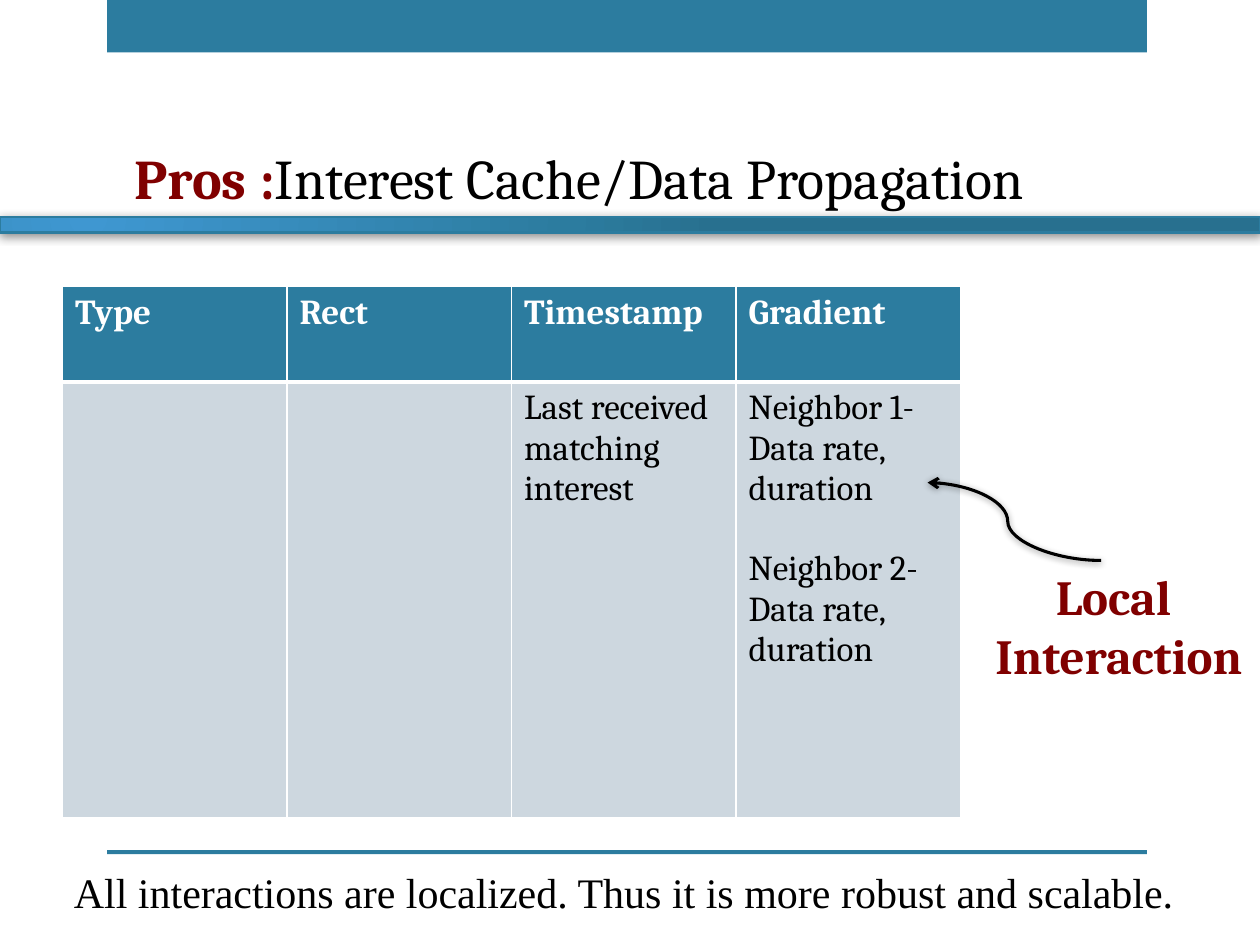
from pptx import Presentation
from pptx.dml.color import RGBColor
from pptx.enum.shapes import MSO_CONNECTOR, MSO_SHAPE
from pptx.enum.text import MSO_ANCHOR, PP_ALIGN
from pptx.oxml import parse_xml
from pptx.oxml.ns import nsdecls
from pptx.util import Cm, Pt

RECT = MSO_SHAPE.RECTANGLE
CURVE = MSO_CONNECTOR.CURVE
BOTTOM, TOP = MSO_ANCHOR.BOTTOM, MSO_ANCHOR.TOP
LEFT, CENTER = PP_ALIGN.LEFT, PP_ALIGN.CENTER

TEAL = RGBColor(0x2C, 0x7C, 0x9F)
PALE = RGBColor(0xCD, 0xD7, 0xDF)
MAROON = RGBColor(0x80, 0x00, 0x00)
BLACK = RGBColor(0x00, 0x00, 0x00)
WHITE = RGBColor(0xFF, 0xFF, 0xFF)
BAR_STOPS = ((0, "3F97D1"), (76, "2C7C9F"), (100, "28708F"))

SERIF = "Cambria"
ROMAN = "Times New Roman"

HEADERS = ["Type", "Rect", "Timestamp", "Gradient"]
ENTRY = [
    [],
    [],
    ["Last received matching interest"],
    ["Neighbor 1-", "Data rate, duration", "Neighbor 2-", "Data rate, duration"],
]


def style(r, size, color, bold=False, font=SERIF):
    r.font.name = font
    r.font.size = Pt(size)
    r.font.bold = bold
    r.font.color.rgb = color


def add_band(s, x, y, w, h):
    sp = s.shapes.add_shape(RECT, Cm(x), Cm(y), Cm(w), Cm(h))
    sp.shadow.inherit = False
    sp.fill.solid()
    sp.fill.fore_color.rgb = TEAL
    sp.line.fill.background()
    return sp


def add_shadow(sp, opacity, blur, dist, angle):
    """Put an outer shadow in the shape's effect list."""
    props = sp._element.spPr
    for old in props.findall("{*}effectLst"):
        props.remove(old)
    props.append(parse_xml(
        f'<a:effectLst {nsdecls("a")}><a:outerShdw blurRad="{Pt(blur)}" '
        f'dist="{Pt(dist)}" dir="{angle * 60000}" rotWithShape="0">'
        f'<a:srgbClr val="000000"><a:alpha val="{opacity * 1000}"/></a:srgbClr>'
        '</a:outerShdw></a:effectLst>'))


def add_gradient_bar(s, x, y, w, h):
    sp = add_band(s, x, y, w, h)
    stops = "".join(
        f'<a:gs pos="{pos * 1000}"><a:srgbClr val="{color}"/></a:gs>'
        for pos, color in BAR_STOPS)
    props = sp._element.spPr
    props.replace(props.find("{*}solidFill"), parse_xml(
        f'<a:gradFill {nsdecls("a")} rotWithShape="1"><a:gsLst>{stops}</a:gsLst>'
        '<a:path path="circle"><a:fillToRect l="15000" t="15000" '
        'r="100000" b="100000"/></a:path></a:gradFill>'))
    sp.line.color.rgb = TEAL
    sp.line.width = Pt(1.25)
    add_shadow(sp, 45, 6, 1, 90)


def add_text(s, box, lines, size, font=SERIF, align=LEFT, anchor=TOP, wrap=False):
    """Each line is a list of (text, color, bold) runs."""
    tf = s.shapes.add_textbox(*map(Cm, box)).text_frame
    tf.word_wrap = wrap
    tf.vertical_anchor = anchor
    for i, runs in enumerate(lines):
        p = tf.paragraphs[0] if i == 0 else tf.add_paragraph()
        p.alignment = align
        for text, color, bold in runs:
            r = p.add_run()
            r.text = text
            style(r, size, color, bold, font)


def set_borders(cell, top, bottom):
    widths = {"lnL": 1, "lnR": 1, "lnT": top, "lnB": bottom}
    for i, (side, width) in enumerate(widths.items()):
        cell._tc.get_or_add_tcPr().insert(i, parse_xml(
            f'<a:{side} {nsdecls("a")} w="{Pt(width)}"><a:solidFill>'
            f'<a:srgbClr val="{WHITE}"/></a:solidFill></a:{side}>'))


def fill_cell(cell, lines, fill, color, bold):
    cell.fill.solid()
    cell.fill.fore_color.rgb = fill
    tf = cell.text_frame
    tf.text = "\n".join(lines)
    for i, p in enumerate(tf.paragraphs):
        if i == 2:  # gap before the second neighbor
            p.space_before = Pt(23)
        for r in p.runs:
            style(r, 20, color, bold)


def add_cache_table(s):
    tbl = s.shapes.add_table(
        2, len(HEADERS), Cm(1.26), Cm(5.77), Cm(18.1), Cm(10.72)).table
    tbl.rows[0].height, tbl.rows[1].height = Cm(1.93), Cm(8.79)
    for i, (header, lines) in enumerate(zip(HEADERS, ENTRY)):
        head, body = tbl.cell(0, i), tbl.cell(1, i)
        fill_cell(head, [header], TEAL, WHITE, True)
        fill_cell(body, lines, PALE, BLACK, False)
        set_borders(head, 1, 3)
        set_borders(body, 3, 1)


def add_curved_arrow(s, x1, y1, x2, y2):
    cn = s.shapes.add_connector(CURVE, Cm(x1), Cm(y1), Cm(x2), Cm(y2))
    cn.line.color.rgb = BLACK
    cn.line.width = Pt(1.75)
    cn.line._get_or_add_ln().append(
        parse_xml(f'<a:tailEnd {nsdecls("a")} type="arrow"/>'))
    geom = cn._element.spPr.find("{*}prstGeom")
    geom.replace(geom.find("{*}avLst"), parse_xml(
        f'<a:avLst {nsdecls("a")}><a:gd name="adj1" fmla="val 53800"/></a:avLst>'))
    add_shadow(cn, 40, 4, 1, 90)


def main():
    prs = Presentation()
    prs.slide_width, prs.slide_height = Cm(25.4), Cm(19.05)
    s = prs.slides.add_slide(prs.slide_layouts[6])

    # Top and bottom bands
    add_band(s, 2.16, 0, 20.96, 1.06)
    add_band(s, 2.16, 17.14, 20.96, 0.08)

    # Title and the bar under it
    add_text(s, (2.46, 1.3, 21.08, 3.07),
             [[("Pros :", MAROON, True),
               ("Interest Cache/Data Propagation", BLACK, False)]],
             32, anchor=BOTTOM, wrap=True)
    add_gradient_bar(s, 0, 4.37, 25.4, 0.32)

    # Interest cache, with the callout on its gradient column
    add_cache_table(s)
    add_text(s, (19.71, 11.3, 5.69, 3.84),
             [[("Local ", MAROON, True)], [("Interaction", MAROON, True)]],
             28, align=CENTER)
    add_curved_arrow(s, 22.2, 11.3, 18.7, 9.73)

    # Conclusion
    add_text(s, (1.24, 17.35, 22.94, 2.31),
             [[("All interactions are localized. Thus it is more robust and scalable.",
                BLACK, False)]], 24, font=ROMAN)

    prs.save("out.pptx")


if __name__ == "__main__":
    main()
